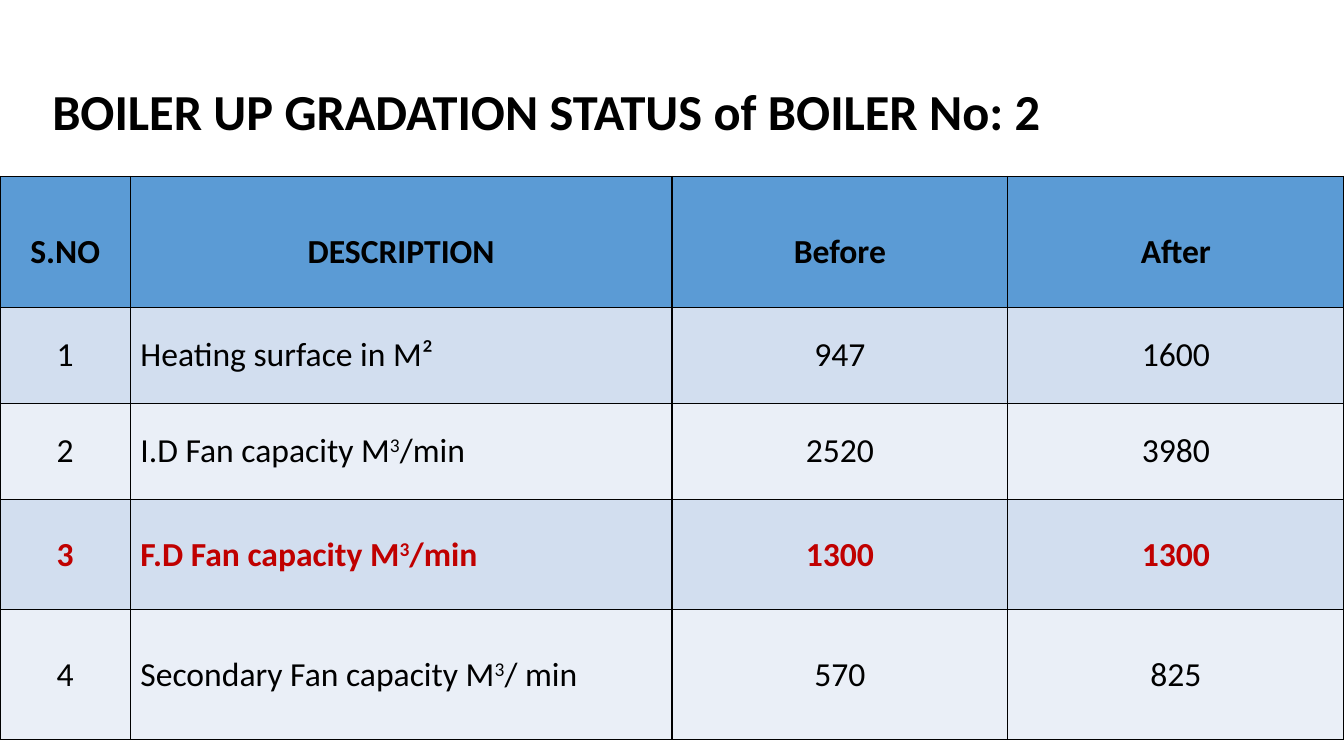
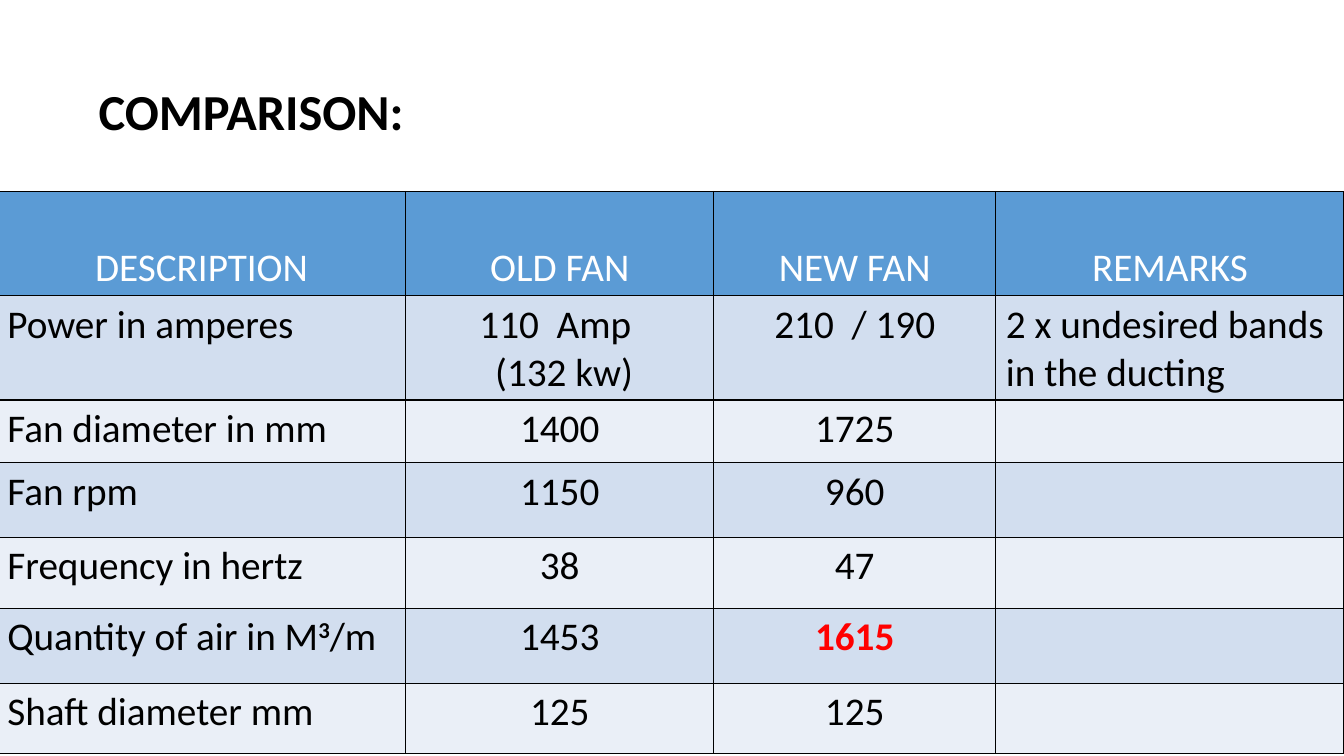
from dataclasses import dataclass

from lxml import etree
from pptx import Presentation
from pptx.dml.color import RGBColor
from pptx.enum.text import MSO_ANCHOR, PP_ALIGN
from pptx.oxml.ns import qn
from pptx.util import Inches, Pt

LEFT, CENTER = PP_ALIGN.LEFT, PP_ALIGN.CENTER
TOP, MIDDLE = MSO_ANCHOR.TOP, MSO_ANCHOR.MIDDLE
BLANK_LAYOUT = 6


@dataclass(frozen=True)
class Theme:
    font: str = "Calibri"
    ink: str = "000000"
    paper: str = "FFFFFF"
    header: str = "5B9BD5"
    bands: tuple = ("D2DEEF", "EAEFF7")
    dark_red: str = "C00000"
    bright_red: str = "FF0000"
    title_size: int = 36
    status_size: int = 24
    comparison_size: int = 28
    border: int = 1
    superscript: int = 30


@dataclass(frozen=True)
class TableStyle:
    size: int
    anchor: int
    header_color: str
    header_bold: bool
    header_spacing: float
    accent: str
    left_columns: tuple
    bold_powers: bool = False


class Deck:
    """Slides in one theme, measured in percent of the slide's size."""

    def __init__(self, theme):
        self.theme = theme
        self.show = Presentation()
        self.show.slide_width = Inches(13.333)
        self.show.slide_height = Inches(7.5)
        self.page = None

    def across(self, share):
        return round(self.show.slide_width * share / 100)

    def down(self, share):
        return round(self.show.slide_height * share / 100)

    def add_page(self):
        self.page = self.show.slides.add_slide(self.show.slide_layouts[BLANK_LAYOUT])

    def add_spans(self, para, text, size, color, bold=False, bold_powers=False):
        for index, piece in enumerate(text.split("^")):
            power = index % 2 == 1
            span = para.add_run()
            span.text = piece
            span.font.name = self.theme.font
            span.font.size = Pt(size)
            span.font.bold = bold or (power and bold_powers)
            span.font.color.rgb = RGBColor.from_string(color)
            if power:
                properties = span._r.get_or_add_rPr()
                properties.set("baseline", str(self.theme.superscript * 1000))

    def title(self, text, left, width):
        box = self.page.shapes.add_textbox(
            self.across(left), self.down(5.5), self.across(width), self.down(19.2))
        frame = box.text_frame
        frame.word_wrap = True
        frame.vertical_anchor = MIDDLE
        para = frame.paragraphs[0]
        para.line_spacing = 0.9
        self.add_spans(para, text, self.theme.title_size, self.theme.ink, bold=True)

    def outline(self, cell):
        properties = cell._tc.get_or_add_tcPr()
        for index, side in enumerate(("lnL", "lnR", "lnT", "lnB")):
            line = etree.Element(qn(f"a:{side}"), w=str(Pt(self.theme.border)))
            fill = etree.SubElement(line, qn("a:solidFill"))
            etree.SubElement(fill, qn("a:srgbClr"), val=self.theme.ink)
            properties.insert(index, line)

    def fill_cell(self, cell, text, row, column, style):
        theme = self.theme
        header = row == 0
        accented = text.startswith("!")
        color, bold = theme.ink, accented
        if header:
            color, bold = style.header_color, style.header_bold
        elif accented:
            color = style.accent
        cell.fill.solid()
        cell.fill.fore_color.rgb = RGBColor.from_string(
            theme.header if header else theme.bands[(row - 1) % 2])
        cell.vertical_anchor = style.anchor
        self.outline(cell)
        if not text:
            return
        frame = cell.text_frame
        for index, line in enumerate(text.removeprefix("!").split("\n")):
            para = frame.add_paragraph() if index else frame.paragraphs[0]
            flush_left = column in style.left_columns and not header
            para.alignment = LEFT if flush_left else CENTER
            if header:
                para.line_spacing = style.header_spacing
            self.add_spans(para, line, style.size, color, bold, style.bold_powers)

    def table(self, left, top, widths, heights, rows, style):
        table = self.page.shapes.add_table(
            len(heights), len(widths), self.across(left), self.down(top),
            self.across(sum(widths)), self.down(sum(heights))).table
        table.first_row = table.horz_banding = False
        for column, width in zip(table.columns, widths):
            column.width = self.across(width)
        for row, height in zip(table.rows, heights):
            row.height = self.down(height)
        for row, texts in enumerate(rows):
            for column, text in enumerate(texts):
                self.fill_cell(table.cell(row, column), text, row, column, style)


STATUS = [
    ("S.NO", "DESCRIPTION", "Before", "After"),
    ("1", "Heating surface in M²", "947", "1600"),
    ("2", "I.D Fan capacity M^3^/min", "2520", "3980"),
    ("!3", "!F.D Fan capacity M^3^/min", "!1300", "!1300"),
    ("4", "Secondary Fan capacity M^3^/ min", "570", "825"),
]
COMPARISON = [
    ("DESCRIPTION", "OLD FAN", "NEW FAN", "REMARKS"),
    ("Power in amperes", "110  Amp \n (132 kw)", "210  / 190",
     "2 x undesired bands in the ducting"),
    ("Fan diameter in mm", "1400", "1725", ""),
    ("Fan rpm", "1150", "960", ""),
    ("Frequency in hertz", "38", "47", ""),
    ("Quantity of air in M^3^/m", "1453", "!1615", ""),
    ("Shaft diameter mm", "125", "125", ""),
]


def main():
    theme = Theme()
    deck = Deck(theme)

    deck.add_page()
    deck.title("BOILER UP GRADATION STATUS of BOILER No: 2", 3.15, 90)
    deck.table(0, 23.33, (9.7, 40.3, 25, 25), (17.3, 12.7, 12.8, 14.55, 17.2), STATUS,
               TableStyle(theme.status_size, MIDDLE, theme.ink, True, 1.5,
                          theme.dark_red, (1,)))

    deck.add_page()
    deck.title("COMPARISON:", 6.6, 86.5)
    deck.table(-0.2, 25.33, (30.4, 22.9, 21, 25.9),
               (13.8, 13.8, 8.3, 9.9, 9.35, 9.9, 9.35), COMPARISON,
               TableStyle(theme.comparison_size, TOP, theme.paper, False, 2.0,
                          theme.bright_red, (0, 3), bold_powers=True))

    deck.show.save("out.pptx")


if __name__ == "__main__":
    main()
